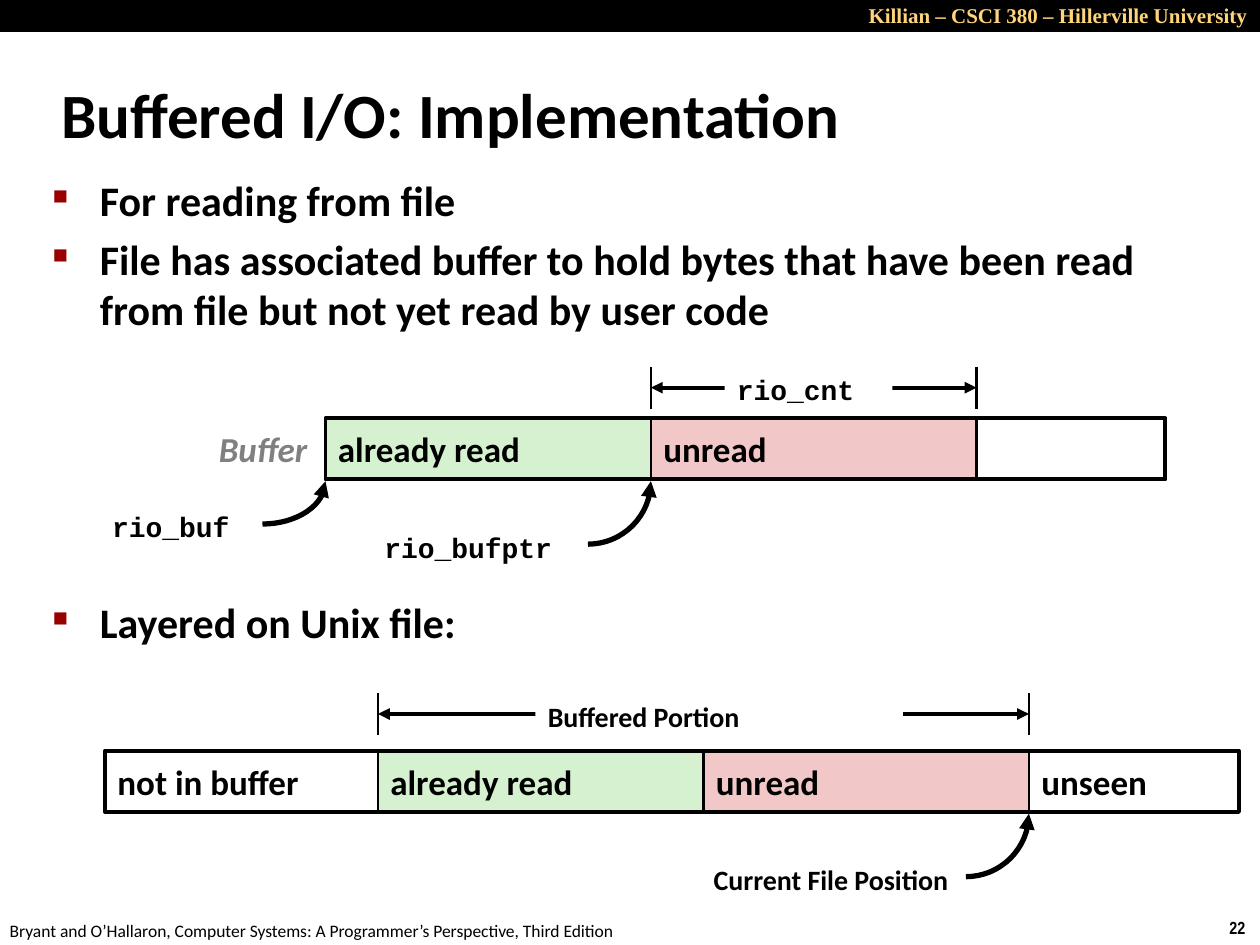
"""Build the slide on how buffered I/O is implemented."""
import math
from dataclasses import dataclass
from typing import Any, Optional

import lxml.etree
import pptx
import pptx.dml.color
import pptx.enum.shapes
import pptx.enum.text
import pptx.oxml
import pptx.oxml.ns
import pptx.util

Pt = pptx.util.Pt
ALIGN = pptx.enum.text.PP_ALIGN
ANCHOR = pptx.enum.text.MSO_ANCHOR


@dataclass(frozen=True)
class Theme:
    ink: str = "000000"
    paper: str = "FFFFFF"
    gold: str = "FFD579"
    grey: str = "808080"
    bullet: str = "990000"
    read: str = "D5F1CF"
    unread: str = "F1C7C7"
    sans: str = "Calibri"
    code: str = "Courier New"
    serif: str = "Times New Roman"
    narrow: str = "Arial Narrow"
    title: float = 36
    body: float = 24
    cell: float = 20
    label: float = 16
    header: float = 12
    footer: float = 10
    thin: float = 1.5
    medium: float = 2.25
    thick: float = 3


THEME = Theme()


@dataclass(frozen=True)
class Box:
    left: float
    top: float
    width: float
    height: float

    def lengths(self) -> tuple:
        return tuple(Pt(v) for v in (self.left, self.top, self.width, self.height))


@dataclass(frozen=True)
class Label:
    text: str
    box: Box
    size: float = THEME.label
    font: str = THEME.sans
    color: str = THEME.ink
    bold: bool = True
    italic: bool = False
    align: Any = ALIGN.LEFT
    anchor: Any = ANCHOR.TOP
    wrap: bool = True
    fill: Optional[str] = None


@dataclass(frozen=True)
class Cell:
    text: str
    width: float
    fill: Optional[str] = None


@dataclass(frozen=True)
class Strip:
    left: float
    top: float
    cells: tuple


@dataclass(frozen=True)
class Span:
    left: float
    right: float
    top: float
    label: Label


@dataclass(frozen=True)
class Pointer:
    tip_x: float
    tip_y: float
    width: float
    height: float


@dataclass(frozen=True)
class Bullet:
    text: str
    space_before: float


STRIP_HEIGHT = 35
TICK_HEIGHT = 24
HEADER_BAR = Box(0, 0, 720, 18)
BODY_BOX = Box(23, 96, 654.5, 312)
BULLETS = (
    Bullet("For reading from file", 0),
    Bullet("File has associated buffer to hold bytes that have been read "
           "from file but not yet read by user code", 5),
    Bullet("Layered on Unix file:", 150),
)
STRIPS = (
    Strip(186, 239, (Cell("already read", 186, THEME.read),
                     Cell("unread", 186, THEME.unread), Cell("", 108))),
    Strip(60, 429, (Cell("not in buffer", 156), Cell("already read", 186, THEME.read),
                    Cell("unread", 186, THEME.unread), Cell("unseen", 120))),
)
SPANS = (
    Span(372, 558, 209.5, Label("rio_cnt", Box(414, 209.5, 96, 24.5),
                                font=THEME.code, fill=THEME.paper)),
    Span(216, 588, 396, Label("Buffered Portion", Box(306, 396, 210, 26.5),
                              fill=THEME.paper)),
)
POINTERS = (
    Pointer(186, 275, 36, 24.5),
    Pointer(372, 275, 36, 36),
    Pointer(588, 465, 36, 36),
)
LABELS = (
    Label("Killian – CSCI 380 – Hillerville University", Box(450, -2, 270, 22),
          THEME.header, THEME.serif, THEME.gold, align=ALIGN.RIGHT),
    Label("22", Box(695.5, 520.5, 24.5, 19.5), THEME.footer, THEME.narrow, wrap=False),
    Label("Bryant and O’Hallaron, Computer Systems: A Programmer’s Perspective, Third Edition",
          Box(-1.5, 522, 366, 19.5), THEME.footer, bold=False, wrap=False),
    Label("Buffered I/O: Implementation", Box(28, 34.5, 597.5, 60), THEME.title,
          anchor=ANCHOR.MIDDLE),
    Label("Buffer", Box(118, 240.5, 67, 31.5), THEME.cell, color=THEME.grey,
          italic=True, wrap=False),
    Label("rio_buf", Box(57, 287.5, 82, 24.5), font=THEME.code),
    Label("rio_bufptr", Box(212.5, 299.5, 126, 24.5), font=THEME.code),
    Label("Current File Position", Box(345, 489.5, 204, 26.5), align=ALIGN.RIGHT),
)


def rgb(value: str) -> pptx.dml.color.RGBColor:
    """Turn a hex string into a colour."""
    return pptx.dml.color.RGBColor.from_string(value)


def apply(target: Any, values: dict) -> None:
    """Set every named attribute on the target."""
    for name, value in values.items():
        setattr(target, name, value)


def style_run(run: Any, label: Label) -> None:
    """Give a run the type of its label."""
    apply(run.font, {"size": Pt(label.size), "name": label.font,
                     "bold": label.bold, "italic": label.italic})
    run.font.color.rgb = rgb(label.color)


def draw_label(slide: Any, label: Label) -> None:
    """Place one line of text."""
    box = slide.shapes.add_textbox(*label.box.lengths())
    if label.fill:
        box.fill.solid()
        box.fill.fore_color.rgb = rgb(label.fill)
    apply(box.text_frame, {"word_wrap": label.wrap, "vertical_anchor": label.anchor})
    paragraph = box.text_frame.paragraphs[0]
    paragraph.alignment = label.align
    run = paragraph.add_run()
    run.text = label.text
    style_run(run, label)


def draw_rect(slide: Any, box: Box, fill: Optional[str], weight: float) -> None:
    """Draw a plain rectangle."""
    rect = slide.shapes.add_shape(pptx.enum.shapes.MSO_SHAPE.RECTANGLE, *box.lengths())
    rect.shadow.inherit = False
    if fill:
        rect.fill.solid()
        rect.fill.fore_color.rgb = rgb(fill)
    else:
        rect.fill.background()
    set_line(rect.line, weight)


def set_line(line: Any, weight: float, *arrow_ends: str) -> None:
    """Colour a line and add arrowheads at the named ends."""
    line.color.rgb = rgb(THEME.ink)
    line.width = Pt(weight)
    for end in arrow_ends:
        head = lxml.etree.SubElement(line._get_or_add_ln(), pptx.oxml.ns.qn(f"a:{end}"))
        head.set("type", "triangle")


def draw_strip(slide: Any, strip: Strip) -> None:
    """Draw a row of cells inside a heavier frame."""
    left = strip.left
    for cell in strip.cells:
        box = Box(left, strip.top, cell.width, STRIP_HEIGHT)
        draw_rect(slide, box, cell.fill, THEME.thin)
        if cell.text:
            draw_label(slide, Label(cell.text, box, THEME.cell, anchor=ANCHOR.MIDDLE))
        left += cell.width
    frame = Box(strip.left, strip.top, left - strip.left, STRIP_HEIGHT)
    draw_rect(slide, frame, None, THEME.medium)


def draw_line(slide: Any, start: tuple, end: tuple, weight: float, *arrow_ends: str) -> None:
    """Draw a straight connector."""
    line = slide.shapes.add_connector(pptx.enum.shapes.MSO_CONNECTOR.STRAIGHT,
                                      *(Pt(v) for v in start + end))
    set_line(line.line, weight, *arrow_ends)
    lxml.etree.SubElement(line._element.spPr, pptx.oxml.ns.qn("a:effectLst"))


def draw_span(slide: Any, span: Span) -> None:
    """Draw a dimension arrow between two ticks with its label."""
    for x in (span.left, span.right):
        draw_line(slide, (x, span.top + TICK_HEIGHT), (x, span.top), THEME.thin)
    middle = span.top + TICK_HEIGHT / 2
    draw_line(slide, (span.left, middle), (span.right, middle), THEME.medium,
              "headEnd", "tailEnd")
    draw_label(slide, span.label)


def draw_pointer(slide: Any, pointer: Pointer, steps: int = 16) -> None:
    """Draw a quarter-ellipse arrow that ends at its tip."""
    angles = [math.pi / 2 * step / steps for step in range(steps + 1)]
    points = [(Pt(pointer.tip_x - pointer.width * (1 - math.cos(angle))),
               Pt(pointer.tip_y + pointer.height * math.sin(angle))) for angle in angles]
    builder = slide.shapes.build_freeform(*points[0])
    builder.add_line_segments(points[1:], close=False)
    curve = builder.convert_to_shape()
    curve.shadow.inherit = False
    curve.fill.background()
    set_line(curve.line, THEME.thick, "headEnd")


def draw_bullets(slide: Any) -> None:
    """Write the bulleted statements."""
    frame = slide.shapes.add_textbox(*BODY_BOX.lengths()).text_frame
    frame.word_wrap = True
    for index, bullet in enumerate(BULLETS):
        paragraph = frame.add_paragraph() if index else frame.paragraphs[0]
        paragraph.space_before = Pt(bullet.space_before)
        run = paragraph.add_run()
        run.text = bullet.text
        style_run(run, Label(bullet.text, BODY_BOX, THEME.body))
        props = paragraph._p.get_or_add_pPr()
        for name, indent in {"marL": 27, "indent": -27}.items():
            props.set(name, str(Pt(indent)))
        color = lxml.etree.SubElement(props, pptx.oxml.ns.qn("a:buClr"))
        for parent, tag, value in ((color, "a:srgbClr", THEME.bullet),
                                   (props, "a:buSzPct", "50000")):
            lxml.etree.SubElement(parent, pptx.oxml.ns.qn(tag)).set("val", value)
        lxml.etree.SubElement(props, pptx.oxml.ns.qn("a:buChar")).set("char", "■")


def main() -> None:
    """Build and save the slide."""
    deck = pptx.Presentation()
    apply(deck, {"slide_width": Pt(720), "slide_height": Pt(540)})
    slide = deck.slides.add_slide(deck.slide_layouts[6])
    draw_rect(slide, HEADER_BAR, THEME.ink, 0)
    draw_bullets(slide)
    for draw, parts in ((draw_label, LABELS), (draw_strip, STRIPS),
                        (draw_span, SPANS), (draw_pointer, POINTERS)):
        for part in parts:
            draw(slide, part)
    deck.save("out.pptx")


if __name__ == "__main__":
    main()
